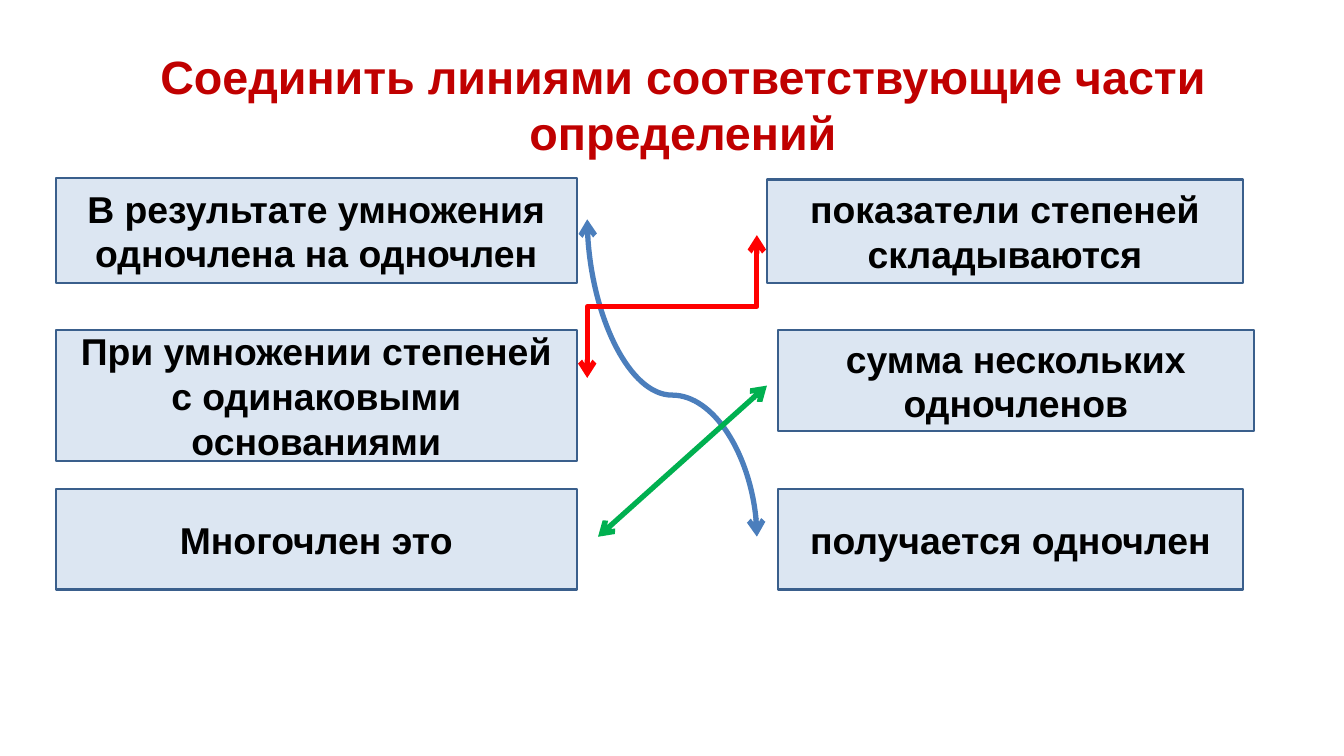
"""Builds a slide that matches the two halves of algebra definitions."""
from lxml.etree import SubElement
from pptx import Presentation
from pptx.dml.color import RGBColor
from pptx.enum.shapes import MSO_CONNECTOR, MSO_SHAPE
from pptx.enum.text import MSO_ANCHOR, MSO_AUTO_SIZE, PP_ALIGN
from pptx.oxml.ns import qn
from pptx.util import Pt

CRIMSON = RGBColor(0xC0, 0x00, 0x00)
BLACK = RGBColor(0x00, 0x00, 0x00)
PALE = RGBColor(0xDC, 0xE6, 0xF2)
NAVY = RGBColor(0x3A, 0x5F, 0x8C)
BLUE = RGBColor(0x4B, 0x7E, 0xBC)
RED = RGBColor(0xFF, 0x00, 0x00)
GREEN = RGBColor(0x00, 0xB0, 0x50)


def write(shape, text, size=32, color=BLACK, anchor=MSO_ANCHOR.MIDDLE):
    frame = shape.text_frame
    frame.word_wrap = True
    frame.auto_size = MSO_AUTO_SIZE.NONE
    frame.vertical_anchor = anchor
    frame.margin_left = frame.margin_right = Pt(10)
    frame.margin_top = frame.margin_bottom = Pt(5)
    para = frame.paragraphs[0]
    para.alignment = PP_ALIGN.CENTER
    run = para.add_run()
    run.text = text
    run.font.name = "Arial"
    run.font.size = Pt(size)
    run.font.bold = True
    run.font.color.rgb = color


deck = Presentation()
deck.slide_width, deck.slide_height = Pt(1152), Pt(648)
slide = deck.slides.add_slide(deck.slide_layouts[5])

title = slide.shapes.title
title.left, title.top, title.width, title.height = Pt(86.4), Pt(36), Pt(998), Pt(107)
write(title, "Соединить линиями соответствующие части определений",
      size=40, color=CRIMSON, anchor=MSO_ANCHOR.TOP)

boxes = [
    ("В результате умножения одночлена на одночлен", 48, 152.6, 446.4, 90),
    ("При умножении степеней с одинаковыми основаниями", 48, 283, 446.4, 112.3),
    ("Многочлен это", 48, 419, 446.4, 86.4),
    ("показатели степеней складываются", 657.4, 154, 408.2, 88.6),
    ("сумма нескольких одночленов", 666.7, 283, 408.2, 86.4),
    ("получается одночлен", 666.7, 419, 398.9, 86.4),
]
for text, *place in boxes:
    box = slide.shapes.add_shape(MSO_SHAPE.RECTANGLE, *map(Pt, place))
    box.shadow.inherit = False
    box.fill.solid()
    box.fill.fore_color.rgb = PALE
    box.line.color.rgb = NAVY
    box.line.width = Pt(2)
    write(box, text)

links = [
    (MSO_CONNECTOR.CURVE, (712, 251.3, 440, 396.7), BLUE, 270, 55400),
    (MSO_CONNECTOR.ELBOW, (637.2, 335.5, 514.8, 190.1), RED, 90, 50000),
    (MSO_CONNECTOR.STRAIGHT, (512.6, 460.1, 657.4, 330.5), GREEN, 0, None),
]
for kind, ends, color, turn, bend in links:
    link = slide.shapes.add_connector(kind, *map(Pt, ends))
    link.line.color.rgb = color
    link.line.width = Pt(4.5)
    props = link.element.spPr
    if turn:
        props.find(qn("a:xfrm")).set("rot", str(turn * 60000))
        guides = props.find(qn("a:prstGeom")).find(qn("a:avLst"))
        SubElement(guides, qn("a:gd"), name="adj1", fmla=f"val {bend}")
    for tip in ("a:headEnd", "a:tailEnd"):
        SubElement(props.find(qn("a:ln")), qn(tip), type="arrow")
    SubElement(props, qn("a:effectLst"))

deck.save("out.pptx")
